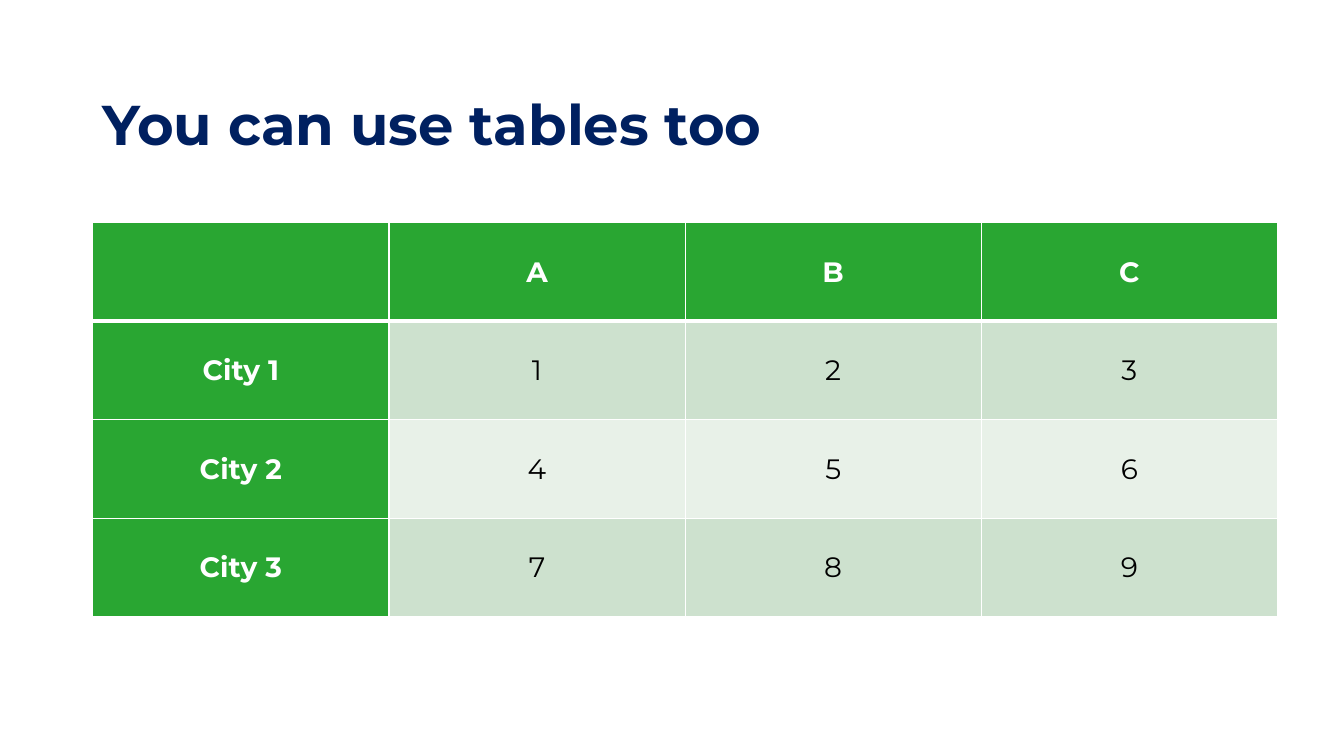
"""Build a slide with a title and a table of three cities."""
import pptx
import pptx.dml.color
import pptx.enum.text
import pptx.util
from lxml import etree
from pptx.util import Inches

A = "{http://schemas.openxmlformats.org/drawingml/2006/main}"
FONT = "Montserrat"
GREEN, WHITE, BLACK, NAVY = "29A632", "FFFFFF", "000000", "002060"
BANDS = ["CDE1CE", "E8F1E8"]
ROWS = [
    ["", "A", "B", "C"],
    ["City 1", "1", "2", "3"],
    ["City 2", "4", "5", "6"],
    ["City 3", "7", "8", "9"],
]


def set_font(p, size, color, bold):
    p.font.name = FONT
    p.font.size = pptx.util.Pt(size)
    p.font.bold = bold
    p.font.color.rgb = pptx.dml.color.RGBColor.from_string(color)


def add_border(cell, side, color, width):
    ln = etree.SubElement(cell._tc.get_or_add_tcPr(), A + "ln" + side,
                          w=str(pptx.util.Pt(width)))
    fill = etree.SubElement(ln, A + "solidFill")
    etree.SubElement(fill, A + "srgbClr", val=color)


prs = pptx.Presentation()
prs.slide_width, prs.slide_height = Inches(13.33), Inches(7.5)
s = prs.slides.add_slide(prs.slide_layouts[6])

tf = s.shapes.add_textbox(Inches(0.92), Inches(0.71), Inches(11.75), Inches(1.1)).text_frame
tf.word_wrap = True
tf.vertical_anchor = pptx.enum.text.MSO_ANCHOR.MIDDLE
p = tf.paragraphs[0]
p.text = "You can use tables too"
p.line_spacing = 0.9
set_font(p, 40, NAVY, True)

table = s.shapes.add_table(len(ROWS), len(ROWS[0]), Inches(0.92), Inches(2.21),
                           Inches(11.75), Inches(3.91)).table
for i, row in enumerate(ROWS):
    for j, text in enumerate(row):
        cell = table.cell(i, j)
        heading = i == 0 or j == 0
        for side in "LRTB":
            under_header = (i, side) in [(0, "B"), (1, "T")]
            add_border(cell, side, WHITE, 3 if under_header else 1)
        cell.fill.solid()
        cell.fill.fore_color.rgb = pptx.dml.color.RGBColor.from_string(
            GREEN if heading else BANDS[(i - 1) % 2])
        cell.vertical_anchor = pptx.enum.text.MSO_ANCHOR.MIDDLE
        p = cell.text_frame.paragraphs[0]
        p.text = text
        p.alignment = pptx.enum.text.PP_ALIGN.CENTER
        set_font(p, 20, WHITE if heading else BLACK, heading)

prs.save("out.pptx")
